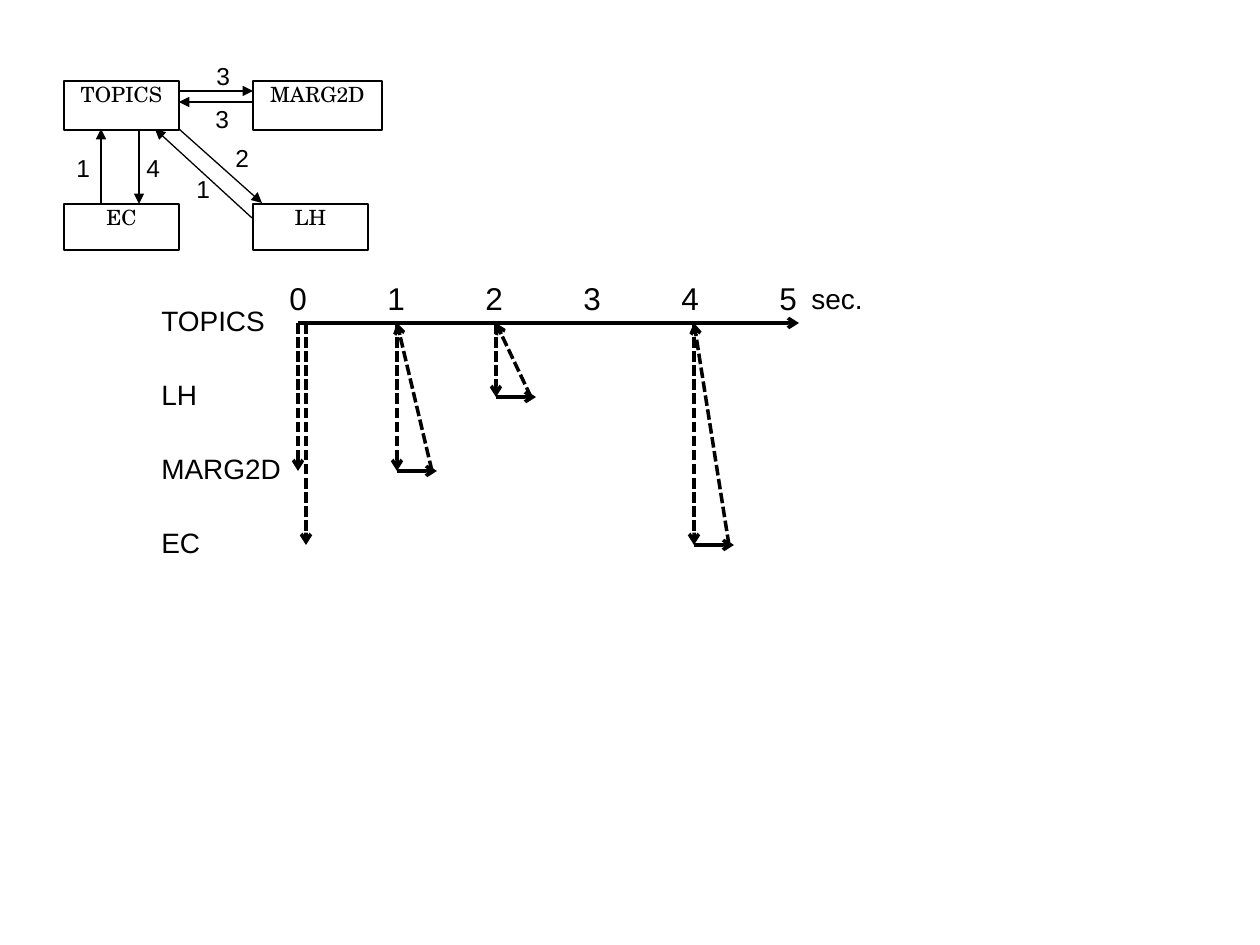
from dataclasses import dataclass

from pptx import Presentation
from pptx.dml.color import RGBColor
from pptx.enum.dml import MSO_LINE as Dash
from pptx.enum.shapes import MSO_CONNECTOR as Conn, MSO_SHAPE as Shape
from pptx.enum.text import MSO_ANCHOR as Anchor, MSO_AUTO_SIZE as Fit, PP_ALIGN as Align
from pptx.oxml.xmlchemy import OxmlElement as Node
from pptx.util import Emu, Pt

SCALE = 914400 / 126


@dataclass(frozen=True)
class Theme:
    ink: RGBColor = RGBColor(0, 0, 0)
    paper: RGBColor = RGBColor(255, 255, 255)
    sans: str = "Arial"
    serif: str = "TeX Gyre Schola"
    node: int = 12
    step: int = 14
    row: int = 16
    tick: int = 18
    thin: float = 0.75
    bold: float = 1.25
    thick: float = 2


THEME = Theme()


def px(*nums):
    return [Emu(round(n * SCALE)) for n in nums]


def write(frame, text, font, size):
    run = frame.paragraphs[0].add_run()
    run.text = text
    run.font.name, run.font.size = font, Pt(size)
    run.font.color.rgb = THEME.ink


def label(group, text, x, y, w, h, size):
    frame = group.shapes.add_textbox(*px(x, y, w, h)).text_frame
    frame.word_wrap = False
    frame.auto_size = Fit.SHAPE_TO_FIT_TEXT
    write(frame, text, THEME.sans, size)


def node(group, text, x, y, w, h, width):
    box = group.shapes.add_shape(Shape.RECTANGLE, *px(x, y, w, h))
    box.shadow.inherit = False
    box.fill.solid()
    box.fill.fore_color.rgb = THEME.paper
    box.line.color.rgb = THEME.ink
    box.line.width = Pt(width)
    frame = box.text_frame
    frame.word_wrap = True
    frame.vertical_anchor = Anchor.TOP
    frame.margin_left, frame.margin_right = px(10, 10)
    frame.margin_top, frame.margin_bottom = px(1, 1)
    frame.paragraphs[0].alignment = Align.CENTER
    write(frame, text, THEME.serif, THEME.node)


def arrow(group, x1, y1, x2, y2, width, head, dash=None):
    link = group.shapes.add_connector(Conn.STRAIGHT, *px(x1, y1, x2, y2))
    line = link.line
    line.color.rgb = THEME.ink
    line.width = Pt(width)
    if dash:
        line.dash_style = dash
    tail = Node("a:tailEnd")
    tail.set("type", head)
    line._get_or_add_ln().append(tail)
    link._element.spPr.append(Node("a:effectLst"))


def draw_flow(slide, left, top):
    """Four program boxes and the numbered calls between them."""
    group = slide.shapes.add_group_shape()
    for text, x, y, w, h, width in (
        ("TOPICS", 0, 26, 115, 49, THEME.bold),
        ("MARG2D", 189, 26, 129, 49, THEME.thin),
        ("EC", 0, 149, 115, 46, THEME.thin),
        ("LH", 189, 149, 115, 46, THEME.thin),
    ):
        node(group, text, left + x, top + y, w, h, width)
    # each call: arrow start, arrow end, step number, corner of its label
    for x1, y1, x2, y2, step, x, y in (
        (115, 36, 189, 36, "3", 140, 0),
        (189, 47, 115, 47, "3", 139, 43),
        (75, 75, 75, 149, "4", 70, 92),
        (37, 148, 37, 74, "1", 0, 92),
        (115, 74, 198, 148, "2", 159, 82),
        (188, 163, 91, 74, "1", 120, 113),
    ):
        arrow(group, left + x1, top + y1, left + x2, top + y2, THEME.thin, "triangle")
        label(group, step, left + x, top + y, 39, 43, THEME.step)


def draw_chart(slide, left, top):
    """Time axis in seconds, with the calls from TOPICS to the rows below."""
    group = slide.shapes.add_group_shape()
    zero, axis, sec, gap = left + 149, top + 50, 99, 74

    def line(x1, y1, x2, y2, dash=None):
        arrow(group, x1, y1, x2, y2, THEME.thick, "arrow", dash)

    line(zero, axis, left + 650, axis)
    for i, name in enumerate(("TOPICS", "LH", "MARG2D", "EC")):
        label(group, name, left, top + 24 + i * gap, 146, 47, THEME.row)
    for i in range(6):
        label(group, str(i), left + 128 + i * 98, top, 43, 50, THEME.tick)
    label(group, "sec.", left + 650, top + 2, 77, 47, THEME.row)

    for shift, row in ((0, 2), (8, 3)):
        line(zero + shift, axis, zero + shift, axis + row * gap, Dash.SQUARE_DOT)
    for time, row in ((1, 2), (2, 1), (4, 3)):
        x, y = zero + time * sec, axis + row * gap
        line(x, axis, x, y, Dash.SQUARE_DOT)
        line(x, y, x + 40, y)
        line(x + 35, y, x, axis, Dash.SQUARE_DOT)


def main():
    deck = Presentation()
    deck.slide_width, deck.slide_height = px(1260, 945)
    slide = deck.slides.add_slide(deck.slide_layouts[6])
    draw_flow(slide, 64, 55)
    draw_chart(slide, 149, 273)
    deck.save("out.pptx")


if __name__ == "__main__":
    main()
